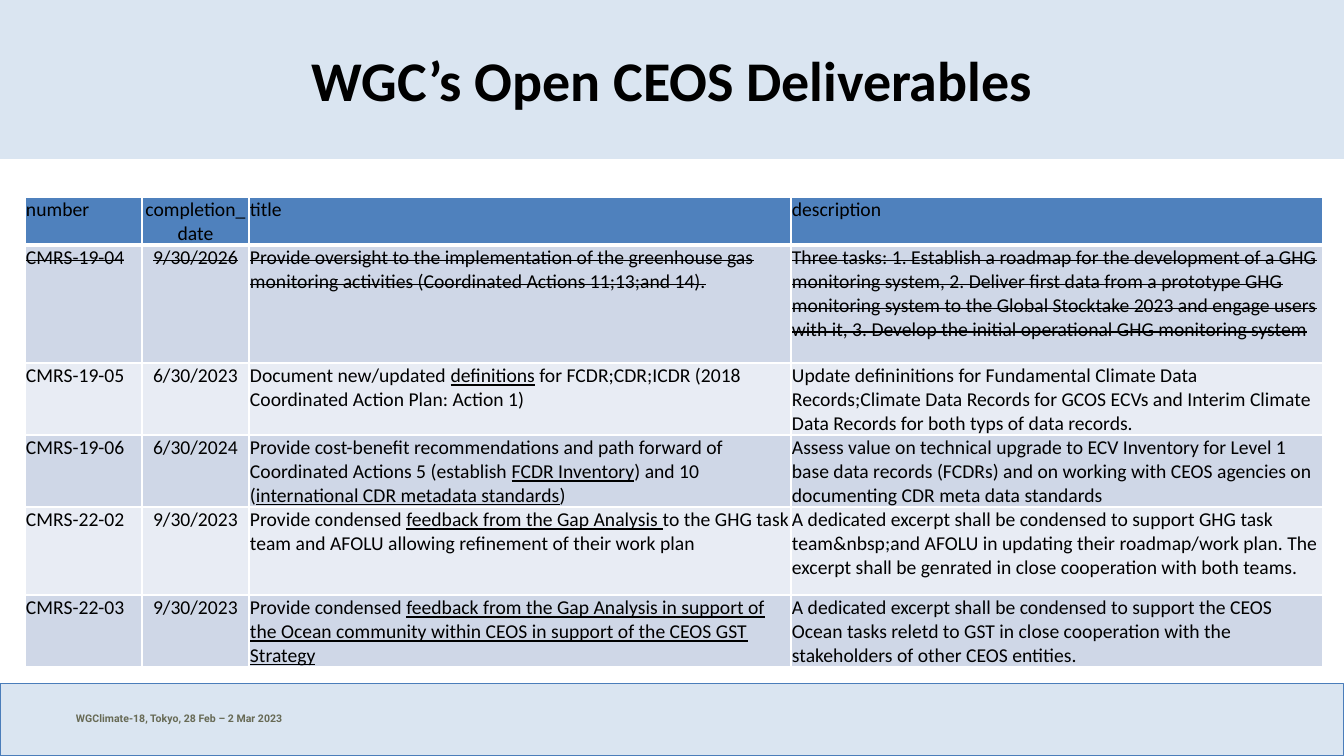
"""Build the slide listing the open CEOS deliverables of WGC."""
from lxml import etree
from pptx import Presentation
from pptx.dml.color import RGBColor
from pptx.enum.shapes import MSO_SHAPE
from pptx.enum.text import MSO_ANCHOR, PP_ALIGN
from pptx.oxml.ns import qn
from pptx.util import Emu, Pt

PX = 12192000 / 1344
RECTANGLE = MSO_SHAPE.RECTANGLE
MIDDLE = MSO_ANCHOR.MIDDLE
LEFT, CENTER = PP_ALIGN.LEFT, PP_ALIGN.CENTER

BLACK = RGBColor(0x00, 0x00, 0x00)
WHITE = RGBColor(0xFF, 0xFF, 0xFF)
BAND_FILL = RGBColor(0xDA, 0xE5, 0xF1)
BAND_LINE = RGBColor(0x4A, 0x7D, 0xBA)
FOOTER_GREY = RGBColor(0x67, 0x6A, 0x55)
HEADER_FILL = RGBColor(0x4F, 0x81, 0xBD)
ROW_FILLS = [RGBColor(0xCF, 0xD7, 0xE7), RGBColor(0xE8, 0xEC, 0xF4)]

COLUMN_WIDTHS = [117, 107, 542, 532]
ROW_HEIGHTS = [47, 118, 72, 72, 88, 72]
STRUCK_ROW = 1
UNDERLINE_MARK = "|"
ROWS = [
    ("number", "completion_date", "title", "description"),
    ("CMRS-19-04", "9/30/2026",
     "Provide oversight to the implementation of the greenhouse gas monitoring "
     "activities (Coordinated Actions 11;13;and 14).",
     "Three tasks: 1. Establish a roadmap for the development of a GHG monitoring "
     "system, 2. Deliver first data from a prototype GHG monitoring system to the "
     "Global Stocktake 2023 and engage users with it, 3. Develop the initial "
     "operational GHG monitoring system"),
    ("CMRS-19-05", "6/30/2023",
     "Document new/updated |definitions| for FCDR;CDR;ICDR (2018 Coordinated "
     "Action Plan: Action 1)",
     "Update defininitions for Fundamental Climate Data Records;Climate Data "
     "Records for GCOS ECVs and Interim Climate Data Records for both typs of "
     "data records."),
    ("CMRS-19-06", "6/30/2024",
     "Provide cost-benefit recommendations and path forward of Coordinated "
     "Actions 5 (establish |FCDR Inventory|) and 10 (|international CDR metadata "
     "standards|)",
     "Assess value on technical upgrade to ECV Inventory for Level 1 base data "
     "records (FCDRs) and on working with CEOS agencies on documenting CDR meta "
     "data standards"),
    ("CMRS-22-02", "9/30/2023",
     "Provide condensed |feedback from the Gap Analysis |to the GHG task team "
     "and AFOLU allowing refinement of their work plan",
     "A dedicated excerpt shall be condensed to support GHG task team&nbsp;and "
     "AFOLU in updating their roadmap/work plan. The excerpt shall be genrated in "
     "close cooperation with both teams."),
    ("CMRS-22-03", "9/30/2023",
     "Provide condensed |feedback from the Gap Analysis in support of the Ocean "
     "community within CEOS in support of the CEOS GST Strategy",
     "A dedicated excerpt shall be condensed to support the CEOS Ocean tasks "
     "reletd to GST in close cooperation with the stakeholders of other CEOS "
     "entities."),
]


def px(*lengths):
    return [Emu(round(length * PX)) for length in lengths]


def add_border(cell, side, width):
    ln = etree.SubElement(cell._tc.get_or_add_tcPr(), qn(f"a:ln{side}"), w=str(Pt(width)))
    fill = etree.SubElement(ln, qn("a:solidFill"))
    etree.SubElement(fill, qn("a:srgbClr"), val=str(WHITE))


prs = Presentation()
prs.slide_width, prs.slide_height = px(1344, 756)
s = prs.slides.add_slide(prs.slide_layouts[6])

for top, height, line in [(684, 72, BAND_LINE), (0, 159, None)]:
    sp = s.shapes.add_shape(RECTANGLE, *px(0, top, 1344, height))
    sp.shadow.inherit = False
    sp.fill.solid()
    sp.fill.fore_color.rgb = BAND_FILL
    if line:
        sp.line.color.rgb = line
        sp.line.width = Pt(0.75)
    else:
        sp.line.fill.background()

for text, box, size, font, color, align in [
    ("WGClimate-18, Tokyo, 28 Feb – 2 Mar 2023", (66, 707, 872, 23), 7.5, "Roboto", FOOTER_GREY, LEFT),
    ("WGC’s Open CEOS Deliverables", (213, 16, 918, 126), 40, "Calibri", BLACK, CENTER),
]:
    tf = s.shapes.add_textbox(*px(*box)).text_frame
    tf.word_wrap = True
    tf.vertical_anchor = MIDDLE
    tf.text = text
    p = tf.paragraphs[0]
    p.alignment = align
    r = p.runs[0]
    r.font.size = Pt(size)
    r.font.name = font
    r.font.bold = True
    r.font.color.rgb = color

table = s.shapes.add_table(
    len(ROWS), len(COLUMN_WIDTHS), *px(25, 197, sum(COLUMN_WIDTHS), sum(ROW_HEIGHTS))
).table
table.first_row = False
table.horz_banding = False
for column, width in zip(table.columns, px(*COLUMN_WIDTHS)):
    column.width = width
for row, height in zip(table.rows, px(*ROW_HEIGHTS)):
    row.height = height

for i, texts in enumerate(ROWS):
    for j, text in enumerate(texts):
        cell = table.cell(i, j)
        cell.margin_left, cell.margin_top, cell.margin_right, cell.margin_bottom = px(1, 1, 1, 0)
        for side in "LRTB":
            under_header = (i, side) in [(0, "B"), (1, "T")]
            add_border(cell, side, 3 if under_header else 1)
        cell.fill.solid()
        cell.fill.fore_color.rgb = ROW_FILLS[(i - 1) % 2] if i else HEADER_FILL
        p = cell.text_frame.paragraphs[0]
        p.alignment = CENTER if j == 1 else LEFT
        for k, part in enumerate(text.split(UNDERLINE_MARK)):
            r = p.add_run()
            r.text = part
            r.font.size = Pt(14)
            r.font.name = "Calibri"
            r.font.color.rgb = BLACK
            if k % 2:
                r.font.underline = True
            if i == STRUCK_ROW:
                r.font._element.set("strike", "sngStrike")

prs.save("out.pptx")
